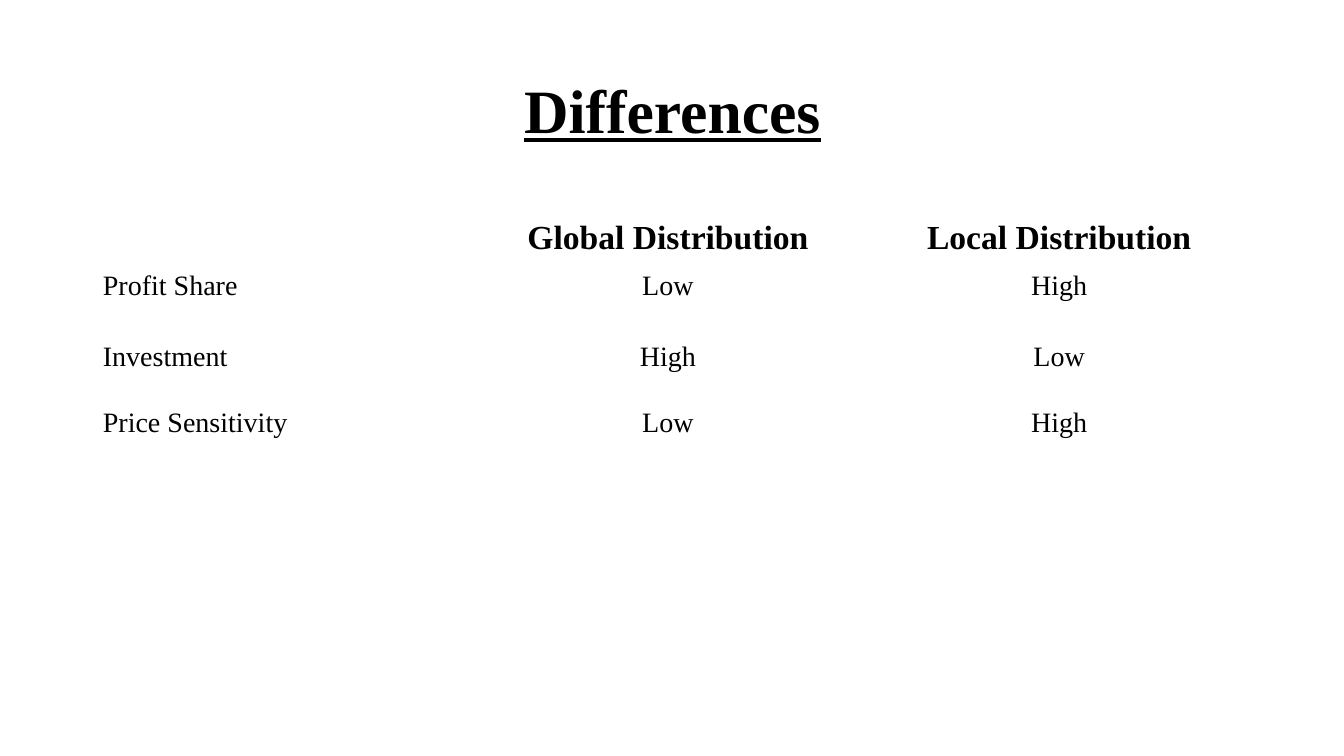
from pptx import Presentation
from pptx.dml.color import RGBColor
from pptx.enum.text import MSO_ANCHOR as Anchor, PP_ALIGN as Align
from pptx.util import Inches, Pt


def color(value):
    return RGBColor.from_string(value)


def write(paragraph, words, size, bold, align):
    paragraph.alignment = align
    run = paragraph.add_run()
    run.text = words
    run.font.name = "Times New Roman"
    run.font.size = Pt(size)
    run.font.bold = bold
    run.font.color.rgb = color("000000")
    return run


deck = Presentation()
deck.slide_width, deck.slide_height = Inches(13.33), Inches(7.5)
slide = deck.slides.add_slide(deck.slide_layouts[6])
slide.background.fill.solid()
slide.background.fill.fore_color.rgb = color("FFFFFF")

left, width = Inches(0.92), Inches(11.5)

heading = slide.shapes.add_textbox(left, Inches(0.4), width, Inches(1.45)).text_frame
heading.word_wrap = True
heading.vertical_anchor = Anchor.MIDDLE
heading.paragraphs[0].line_spacing = 0.9
write(heading.paragraphs[0], "Differences", 44, True, Align.CENTER).font.underline = True

differences = [
    ("", "Global Distribution", "Local Distribution"),
    ("Profit Share", "Low", "High"),
    ("Investment", "High", "Low"),
    ("Price Sensitivity", "Low", "High"),
]
column_widths = [3.74, 3.93, 3.83]
row_heights = [0.47, 0.71, 0.65, 0.84]

comparison = slide.shapes.add_table(
    len(row_heights), len(column_widths), left, Inches(2.13), width, Inches(sum(row_heights))
).table
comparison.first_row = False
comparison.horz_banding = False
for column, column_width in zip(comparison.columns, column_widths):
    column.width = Inches(column_width)

for r, (aspect, row_height) in enumerate(zip(differences, row_heights)):
    comparison.rows[r].height = Inches(row_height)
    for c, words in enumerate(aspect):
        cell = comparison.cell(r, c)
        cell.fill.background()
        if words:
            write(cell.text_frame.paragraphs[0], words, 20 if r else 24, r == 0,
                  Align.CENTER if c else Align.LEFT)

deck.save("out.pptx")
